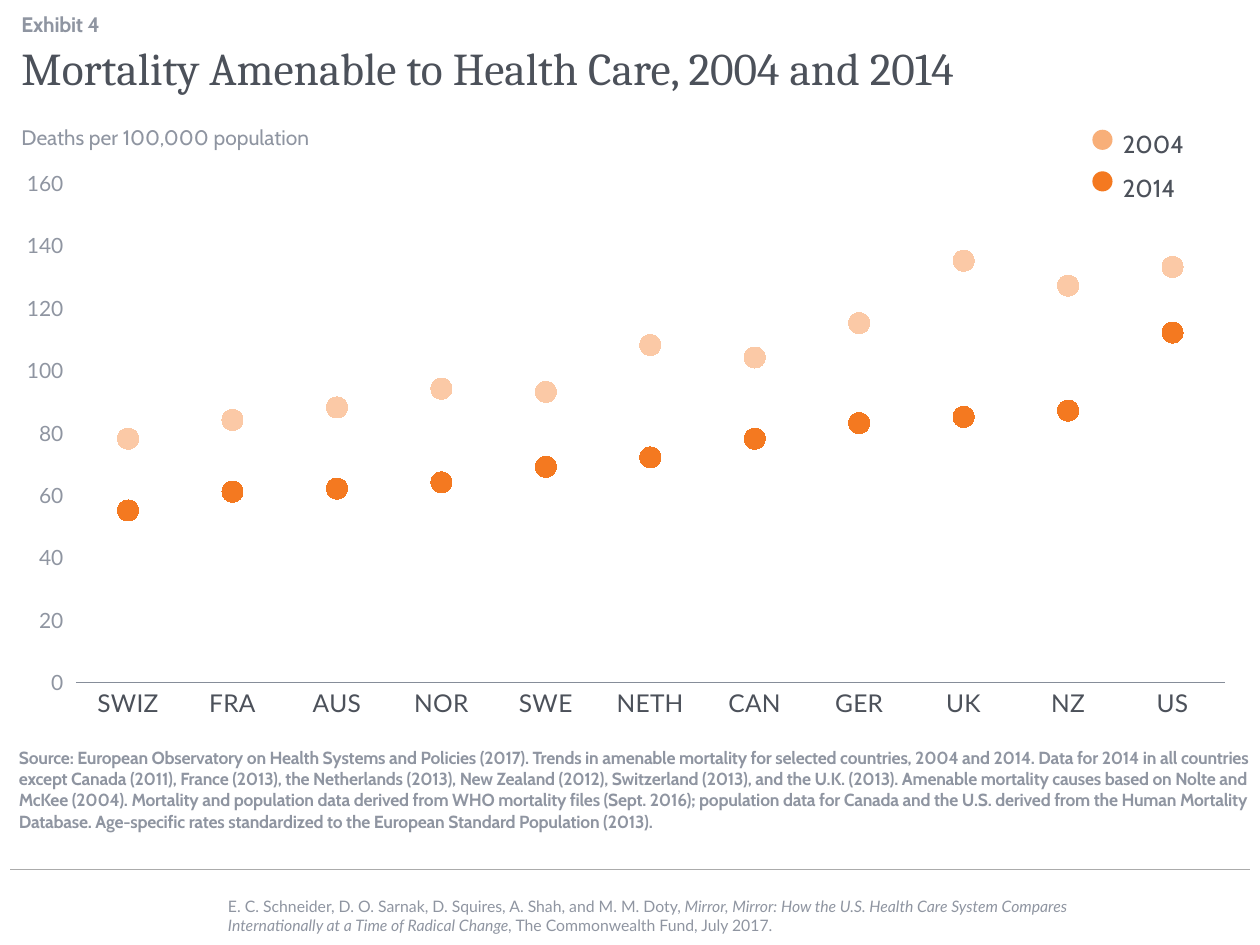
from lxml import etree
from pptx import Presentation, util as u
from pptx.chart.data import CategoryChartData
from pptx.dml.color import RGBColor
from pptx.enum import chart as ch, shapes, text
from pptx.oxml import parse_xml
from pptx.oxml.ns import nsdecls, qn

INK = RGBColor(0x4C, 0x51, 0x5A)
GREY = RGBColor(0x8F, 0x95, 0xA1)
AXIS = RGBColor(0x86, 0x8D, 0x99)
RULE = RGBColor(0xAB, 0xAB, 0xAB)
ORANGE = RGBColor(0xF4, 0x79, 0x20)
PEACH = RGBColor(0xFB, 0xC9, 0xA6)
PEACH_KEY = RGBColor(0xF8, 0xAF, 0x79)
WHITE = RGBColor(0xFF, 0xFF, 0xFF)

COLUMNS, ROWS = 100, 75
COUNTRIES = ["SWIZ", "FRA", "AUS", "NOR", "SWE", "NETH", "CAN", "GER", "UK", "NZ", "US"]
DEATHS = {
    "2004": ([78, 84, 88, 94, 93, 108, 104, 115, 135, 127, 133], PEACH),
    "2014": ([55, 61, 62, 64, 69, 72, 78, 83, 85, 87, 112], ORANGE),
}
KEY_COLOURS = [PEACH_KEY, ORANGE]
SOURCE = (
    "Source: European Observatory on Health Systems and Policies (2017). Trends in amenable "
    "mortality for selected countries, 2004 and 2014. Data for 2014 in all countries except "
    "Canada (2011), France (2013), the Netherlands (2013), New Zealand (2012), Switzerland "
    "(2013), and the U.K. (2013). Amenable mortality causes based on Nolte and McKee (2004). "
    "Mortality and population data derived from WHO mortality files (Sept. 2016); population "
    "data for Canada and the U.S. derived from the Human Mortality Database. Age-specific "
    "rates standardized to the European Standard Population (2013)."
)
CITATION = [
    ("E. C. Schneider, D. O. Sarnak, D. Squires, A. Shah, and M. M. Doty, ", False),
    ("Mirror, Mirror: How the U.S. Health Care System Compares Internationally "
     "at a Time of Radical Change, ", True),
    ("The Commonwealth Fund, July 2017.", False),
]


def style_font(font, size, color, face, bold=False, italic=False):
    font.size, font.name = u.Pt(size), face
    font.bold, font.italic = bold, italic
    font.color.rgb = color


def write(frame, paragraphs, size=12, color=GREY, face="Cabin", bold=False,
          tracking=None, line_spacing=None):
    """Fill a frame; each paragraph is a list of (words, italic) spans."""
    for index, spans in enumerate(paragraphs):
        para = frame.add_paragraph() if index else frame.paragraphs[0]
        if line_spacing:
            para.line_spacing = line_spacing
        for words, italic in spans:
            span = para.add_run()
            span.text = words
            style_font(span.font, size, color, face, bold, italic)
            if tracking:
                span.font._element.set("spc", str(round(tracking * 100)))


class Exhibit:
    """Holds the deck, its page and the grid that all positions are given in."""

    def __init__(self):
        self.deck = Presentation()
        self.deck.slide_width, self.deck.slide_height = u.Inches(10), u.Inches(7.5)
        self.page = self.deck.slides.add_slide(self.deck.slide_layouts[6])
        self.page.background.fill.solid()
        self.page.background.fill.fore_color.rgb = WHITE

    def place(self, column, row):
        return (round(self.deck.slide_width * column / COLUMNS),
                round(self.deck.slide_height * row / ROWS))

    def area(self, column, row, columns, rows):
        return *self.place(column, row), *self.place(columns, rows)

    def text(self, area, paragraphs, bottom=False, parent=None, **style):
        box = (parent or self.page).shapes.add_textbox(*self.area(*area))
        frame = box.text_frame
        frame.word_wrap = True
        frame.margin_left = frame.margin_right = frame.margin_top = frame.margin_bottom = 0
        frame.vertical_anchor = text.MSO_ANCHOR.BOTTOM if bottom else text.MSO_ANCHOR.TOP
        write(frame, paragraphs, **style)

    def rule(self, start, end):
        line = self.page.shapes.add_connector(
            shapes.MSO_CONNECTOR.STRAIGHT, *self.place(*start), *self.place(*end))
        line.line.color.rgb, line.line.width = RULE, u.Pt(0.75)
        etree.SubElement(line._element.spPr, qn("a:effectLst"))

    def dot(self, area, color, parent):
        dot = parent.shapes.add_shape(shapes.MSO_SHAPE.OVAL, *self.area(*area))
        dot.shadow.inherit = False
        dot.fill.solid()
        dot.fill.fore_color.rgb = color
        dot.line.fill.background()

    def key(self, column, row, gap):
        group = self.page.shapes.add_group_shape()
        for index, color in enumerate(KEY_COLOURS):
            self.dot((column, row + index * gap, 1.6, 1.6), color, group)
        self.text((column + 2.4, row - 1.2, 6.6, 6.6), [[(year, False)] for year in DEATHS],
                  parent=group, size=14, color=INK, line_spacing=1.5)

    def dot_chart(self, area, plot):
        data = CategoryChartData(number_format="0")
        data.categories = COUNTRIES
        for year, (deaths, _) in DEATHS.items():
            data.add_series(year, deaths)
        chart = self.page.shapes.add_chart(
            ch.XL_CHART_TYPE.LINE_MARKERS, *self.area(*area), data).chart
        chart.has_legend = chart.has_title = False
        style_font(chart.font, 18, INK, "Lato")
        chart.plots[0].vary_by_categories = False
        for series, (_, color) in zip(chart.plots[0].series, DEATHS.values()):
            series.smooth = False
            series.format.line.fill.background()
            marker = series.marker
            marker.style, marker.size = ch.XL_MARKER_STYLE.CIRCLE, 12
            marker.format.fill.solid()
            marker.format.fill.fore_color.rgb = color
            marker.format.line.fill.background()

        countries, scale = chart.category_axis, chart.value_axis
        countries.major_tick_mark = ch.XL_TICK_MARK.NONE
        countries.format.line.color.rgb, countries.format.line.width = AXIS, u.Pt(0.75)
        style_font(countries.tick_labels.font, 14, INK, "Lato")
        scale.minimum_scale, scale.maximum_scale, scale.major_unit = 0, 160, 20
        scale.has_major_gridlines = False
        scale.major_tick_mark = ch.XL_TICK_MARK.OUTSIDE
        scale.format.line.fill.background()
        scale.tick_labels.number_format = "0"
        scale.tick_labels.number_format_is_linked = False
        style_font(scale.tick_labels.font, 12, GREY, "Lato")
        self.fix_plot(chart, plot)

    @staticmethod
    def fix_plot(chart, plot):
        """Pin the inner plot area to shares (x, y, w, h) of the chart."""
        modes = "".join(f'<c:{side}Mode val="edge"/>' for side in "xy")
        sizes = "".join(f'<c:{side} val="{share}"/>' for side, share in zip("xywh", plot))
        plot_area = chart._chartSpace.chart.plotArea
        for layout in plot_area.findall(qn("c:layout")):
            plot_area.remove(layout)
        plot_area.insert(0, parse_xml(
            f'<c:layout {nsdecls("c")}><c:manualLayout><c:layoutTarget val="inner"/>'
            f'{modes}{sizes}</c:manualLayout></c:layout>'))


def main():
    exhibit = Exhibit()
    exhibit.text((18.1, 69.7, 74, 4.5), [CITATION], bottom=True, size=9, face="Lato")
    exhibit.rule((99.2, 69), (0.8, 69))
    exhibit.text((1.5, 60, 97.5, 6), [[(SOURCE, False)]], bottom=True,
                 size=10, bold=True, tracking=-0.1)
    exhibit.text((1.7, 0.9, 18.7, 1.5), [[("Exhibit 4", False)]], bold=True, tracking=-0.1)
    exhibit.dot_chart((1.1, 12.3, 96.5, 48.9), (0.051, 0.045, 0.945, 0.811))
    exhibit.text((1.7, 3.2, 96.7, 10.4),
                 [[("Mortality Amenable to Health Care, 2004 and 2014", False)]],
                 size=26, color=INK, face="Cambria")
    exhibit.key(86.7, 10.3, gap=3.3)
    exhibit.text((1.7, 9.9, 24.1, 2), [[("Deaths per 100,000 population", False)]])
    exhibit.deck.save("out.pptx")


if __name__ == "__main__":
    main()
